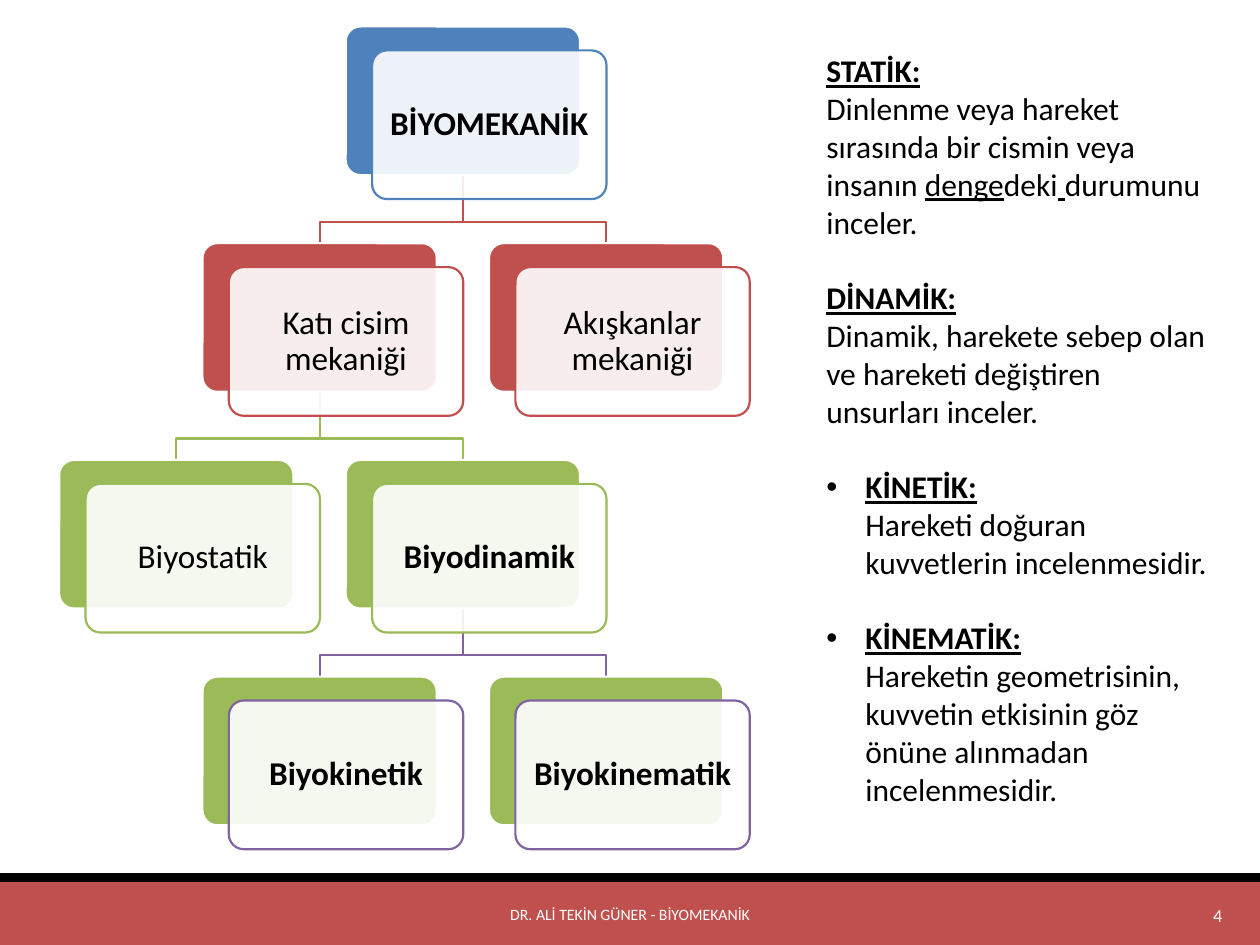
from dataclasses import dataclass

from lxml import etree
from pptx import Presentation
from pptx.dml.color import RGBColor
from pptx.enum import shapes, text
from pptx.oxml import ns
from pptx.util import Inches, Pt

COLORS = {
    "black": "000000",
    "white": "FFFFFF",
    "blue": "4F81BD",
    "red": "C0504D",
    "green": "9BBB59",
    "purple": "8064A2",
}
FONT = "Calibri"
LEFT, TOP, COL_STEP, ROW_STEP = 0.47, 0.21, 1.137, 1.72
CARD_W, CARD_H = 1.86, 1.18
OFFSET_X, OFFSET_Y = 0.21, 0.19
ELBOW_DROP, LINK_DROP = 0.37, 0.54
INDENT = 0.31


@dataclass(frozen=True)
class Node:
    label: str
    col: int
    row: int
    back: str
    outline: str
    bold: bool = False

    @property
    def x(self) -> float:
        return LEFT + self.col * COL_STEP

    @property
    def y(self) -> float:
        return TOP + self.row * ROW_STEP


@dataclass(frozen=True)
class Run:
    text: str
    bold: bool = False
    underline: bool = False


@dataclass(frozen=True)
class Para:
    runs: tuple[Run, ...]
    gap: bool = False
    bullet: bool = False


ROOT = Node("BİYOMEKANİK", 2, 0, "blue", "blue", True)
SOLID = Node("Katı cisim mekaniği", 1, 1, "red", "red")
FLUID = Node("Akışkanlar mekaniği", 3, 1, "red", "red")
STATICS = Node("Biyostatik", 0, 2, "green", "green")
DYNAMICS = Node("Biyodinamik", 2, 2, "green", "green", True)
KINETICS = Node("Biyokinetik", 1, 3, "green", "purple", True)
KINEMATICS = Node("Biyokinematik", 3, 3, "green", "purple", True)
NODES = [ROOT, SOLID, STATICS, DYNAMICS, KINETICS, KINEMATICS, FLUID]
LINKS = [
    (ROOT, FLUID),
    (DYNAMICS, KINEMATICS),
    (DYNAMICS, KINETICS),
    (SOLID, DYNAMICS),
    (SOLID, STATICS),
    (ROOT, SOLID),
]

DEFINITIONS = [
    Para((Run("STATİK:", True, True),)),
    Para((
        Run("Dinlenme veya hareket sırasında bir cismin veya insanın "),
        Run("denge", underline=True),
        Run("deki"),
        Run(" ", underline=True),
        Run("durumunu inceler."),
    )),
    Para((Run("DİNAMİK:", True, True),), gap=True),
    Para((Run("Dinamik, harekete sebep olan ve hareketi değiştiren unsurları inceler."),)),
    Para((
        Run("KİNETİK:", True, True),
        Run("\n"),
        Run("Hareketi doğuran kuvvetlerin incelenmesidir."),
    ), gap=True, bullet=True),
    Para((
        Run("KİNEMATİK:", True, True),
        Run("\n"),
        Run("Hareketin geometrisinin, kuvvetin etkisinin göz önüne alınmadan incelenmesidir."),
    ), gap=True, bullet=True),
]


def rgb(name: str) -> RGBColor:
    return RGBColor.from_string(COLORS[name])


def add_run(p, run: Run, size: float, color: str = "black") -> None:
    if run.text == "\n":
        p.add_line_break()
        return
    r = p.add_run()
    r.text = run.text
    r.font.name = FONT
    r.font.size = Pt(size)
    r.font.bold = run.bold
    r.font.underline = run.underline
    r.font.color.rgb = rgb(color)


def add_block(s, kind, x: float, y: float, w: float, h: float, fill: str, line: str | None = None):
    sp = s.shapes.add_shape(kind, Inches(x), Inches(y), Inches(w), Inches(h))
    sp.shadow.inherit = False
    sp.fill.solid()
    sp.fill.fore_color.rgb = rgb(fill)
    if line:
        sp.line.color.rgb = rgb(line)
        sp.line.width = Pt(1.25)
    else:
        sp.line.fill.background()
    return sp


def add_card(s, x: float, y: float, fill: str, line: str):
    sp = add_block(s, shapes.MSO_SHAPE.ROUNDED_RECTANGLE, x, y, CARD_W, CARD_H, fill, line)
    sp.adjustments[0] = 0.1
    return sp


def add_node(s, node: Node) -> None:
    add_card(s, node.x, node.y, node.back, "white")
    sp = add_card(s, node.x + OFFSET_X, node.y + OFFSET_Y, "white", node.outline)
    color = sp.fill._xPr.find(".//" + ns.qn("a:srgbClr"))
    etree.SubElement(color, ns.qn("a:alpha"), val="90000")
    tf = sp.text_frame
    tf.word_wrap = True
    tf.vertical_anchor = text.MSO_ANCHOR.MIDDLE
    tf.margin_left = tf.margin_right = tf.margin_top = tf.margin_bottom = Inches(0.08)
    p = tf.paragraphs[0]
    p.alignment = text.PP_ALIGN.CENTER
    p.line_spacing = 0.9
    add_run(p, Run(node.label, node.bold), 19)


def add_link(s, parent: Node, child: Node) -> None:
    x1, x2 = parent.x + CARD_W / 2, child.x + CARD_W / 2
    y = parent.y + CARD_H
    points = [(x1, y + ELBOW_DROP), (x2, y + ELBOW_DROP), (x2, y + LINK_DROP)]
    fb = s.shapes.build_freeform(Inches(x1), Inches(y))
    fb.add_line_segments([(Inches(px), Inches(py)) for px, py in points], close=False)
    sp = fb.convert_to_shape()
    sp.shadow.inherit = False
    sp.fill.background()
    sp.line.color.rgb = rgb(child.outline)
    sp.line.width = Pt(1.25)


def add_text_box(s, x: float, y: float, w: float, h: float):
    tf = s.shapes.add_textbox(Inches(x), Inches(y), Inches(w), Inches(h)).text_frame
    tf.word_wrap = True
    return tf


def add_footer(s, label: str, x: float, w: float, size: float, align) -> None:
    tf = add_text_box(s, x, 7.06, w, 0.4)
    tf.vertical_anchor = text.MSO_ANCHOR.MIDDLE
    p = tf.paragraphs[0]
    p.alignment = align
    add_run(p, Run(label), size, "white")


def add_definitions(s, paras: list[Para]) -> None:
    tf = add_text_box(s, 6.46, 0.36, 3.32, 6.16)
    for i, para in enumerate(paras):
        p = tf.add_paragraph() if i else tf.paragraphs[0]
        if para.bullet:
            pPr = p._p.get_or_add_pPr()
            pPr.set("marL", str(Inches(INDENT)))
            pPr.set("indent", str(-Inches(INDENT)))
            etree.SubElement(pPr, ns.qn("a:buFont"), typeface="Arial")
            etree.SubElement(pPr, ns.qn("a:buChar"), char="•")
        if para.gap:
            p.space_before = Pt(21.6)
        for run in para.runs:
            add_run(p, run, 18)


def main() -> None:
    prs = Presentation()
    prs.slide_width, prs.slide_height = Inches(10), Inches(7.5)
    s = prs.slides.add_slide(prs.slide_layouts[6])
    add_block(s, shapes.MSO_SHAPE.RECTANGLE, 0, 7, 10, 0.5, "red")
    add_block(s, shapes.MSO_SHAPE.RECTANGLE, 0, 6.93, 10, 0.07, "black")
    add_footer(s, "DR. ALİ TEKİN GÜNER - BİYOMEKANİK", 3.02, 3.96, 9, text.PP_ALIGN.CENTER)
    add_footer(s, "4", 8.12, 1.68, 10.5, text.PP_ALIGN.RIGHT)
    for parent, child in LINKS:
        add_link(s, parent, child)
    for node in NODES:
        add_node(s, node)
    add_definitions(s, DEFINITIONS)
    prs.save("out.pptx")


if __name__ == "__main__":
    main()
